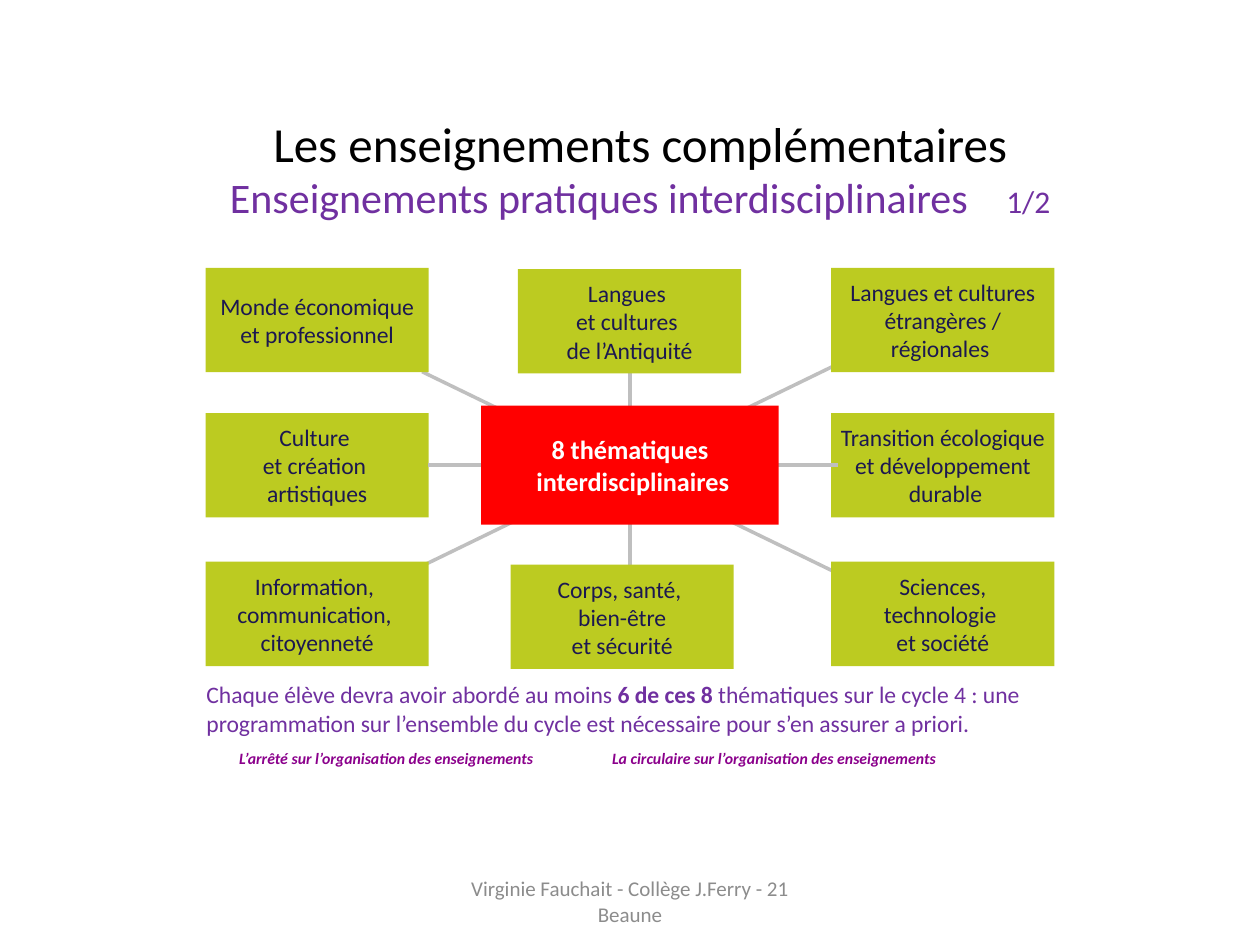
from pptx import Presentation
from pptx.util import Pt
from pptx.dml.color import RGBColor as Rgb
from pptx.enum.shapes import MSO_SHAPE as Shape, MSO_CONNECTOR as Wire
from pptx.enum.text import PP_ALIGN as Align, MSO_ANCHOR as Anchor, MSO_AUTO_SIZE as Fit
from lxml import etree

HUES = {"black": "000000", "violet": "7030A0", "plum": "8B008C", "grey": "BFBFBF",
        "lime": "BCCB21", "navy": "1C1850", "red": "FF0000", "white": "FFFFFF",
        "footer": "8C8C8C"}


def write(par, text, size, hue, bold=False, slant=False):
    run = par.add_run()
    run.text = text
    font = run.font
    font.name, font.size, font.bold, font.italic = "Calibri", Pt(size), bold, slant
    font.color.rgb = Rgb.from_string(HUES[hue])
    return run


def link(x1, y1, x2, y2):
    line = slide.shapes.add_connector(Wire.STRAIGHT, Pt(x1), Pt(y1), Pt(x2), Pt(y2))
    line.line.color.rgb = Rgb.from_string(HUES["grey"])
    line.line.width = Pt(2)
    space = "{http://schemas.openxmlformats.org/drawingml/2006/main}"
    etree.SubElement(line._element.spPr, space + "effectLst")


deck = Presentation()
deck.slide_width, deck.slide_height = Pt(720), Pt(540)
slide = deck.slides.add_slide(deck.slide_layouts[5])

title = slide.shapes.title
title.left, title.top, title.width, title.height = Pt(99.4), Pt(26), Pt(532.8), Pt(139.7)
frame = title.text_frame
frame.auto_size = Fit.NONE
frame.vertical_anchor = Anchor.MIDDLE
head, sub = frame.paragraphs[0], frame.add_paragraph()
head.alignment = sub.alignment = Align.CENTER
write(head, "Les enseignements complémentaires", 28, "black")
write(sub, "Enseignements pratiques interdisciplinaires", 24, "violet")
gap = write(sub, " ", 24, "violet")
gap.font._element.set("spc", "1630")
write(sub, "1/2", 18, "violet")

note = slide.shapes.add_textbox(Pt(110.9), Pt(385.2), Pt(501.8), Pt(40.3))
note.text_frame.word_wrap = True
par = note.text_frame.paragraphs[0]
write(par, "Chaque élève devra avoir abordé au moins ", 13.5, "violet")
write(par, "6 de ces 8", 13.5, "violet", bold=True)
write(par, " thématiques sur le cycle 4 : une programmation sur l’ensemble du cycle "
      "est nécessaire pour s’en assurer a priori.", 13.5, "violet")

for left, width, text in [
    (129.6, 190.1, "L’arrêté sur l’organisation des enseignements"),
    (342.7, 203.8, "La circulaire sur l’organisation des enseignements"),
]:
    box = slide.shapes.add_textbox(Pt(left), Pt(424.1), Pt(width), Pt(18))
    box.text_frame.word_wrap = False
    box.text_frame.auto_size = Fit.SHAPE_TO_FIT_TEXT
    write(box.text_frame.paragraphs[0], text, 9, "plum", bold=True, slant=True)

link(241.2, 212.4, 487.4, 331.9)
link(487.4, 203.8, 232.6, 327.6)
link(360, 176.4, 360, 350.6)

WEST, EAST = 117.5, 475
TOP, MID, LOW = 153, 236, 321
themes = [
    (291.8, 322.7, ["Corps, santé, ", "bien-être", "et sécurité"]),
    (296, 153.8, ["Langues ", "et cultures ", "de l’Antiquité"]),
    (EAST, LOW, ["Sciences, technologie ", "et société"]),
    (EAST, MID, ["Transition écologique et développement", " durable"]),
    (EAST, TOP, ["Langues et cultures", "étrangères / régionales "]),
    (WEST, LOW, ["Information, ", "communication, ", "citoyenneté"]),
    (WEST, MID, ["Culture ", "et création ", "artistiques"]),
    (WEST, TOP, ["Monde économique ", "et professionnel"]),
]
boxes = [(x, y, 127.5, 59.6, "lime", "navy", 13.5, lines) for x, y, lines in themes]
boxes.append((275, 231.8, 170, 68, "red", "white", 15,
              ["8 thématiques", " interdisciplinaires"]))

for x, y, wide, high, fill, ink, size, lines in boxes:
    if fill == "red":
        link(478.8, 265.7, 244.8, 265.7)
    box = slide.shapes.add_shape(Shape.RECTANGLE, Pt(x), Pt(y), Pt(wide), Pt(high))
    box.shadow.inherit = False
    box.fill.solid()
    box.fill.fore_color.rgb = Rgb.from_string(HUES[fill])
    box.line.fill.background()
    frame = box.text_frame
    frame.word_wrap = True
    frame.vertical_anchor = Anchor.MIDDLE
    if (x, y) == (EAST, MID):
        frame.margin_left = frame.margin_right = Pt(2)
    for i, text in enumerate(lines):
        par = frame.add_paragraph() if i else frame.paragraphs[0]
        par.alignment = Align.CENTER
        write(par, text, size, ink, bold=fill == "red")

foot = slide.shapes.add_textbox(Pt(246), Pt(500.5), Pt(228), Pt(28.8))
foot.text_frame.word_wrap = True
foot.text_frame.vertical_anchor = Anchor.MIDDLE
par = foot.text_frame.paragraphs[0]
par.alignment = Align.CENTER
write(par, "Virginie Fauchait - Collège J.Ferry - 21 Beaune", 12, "footer")

deck.save("out.pptx")
